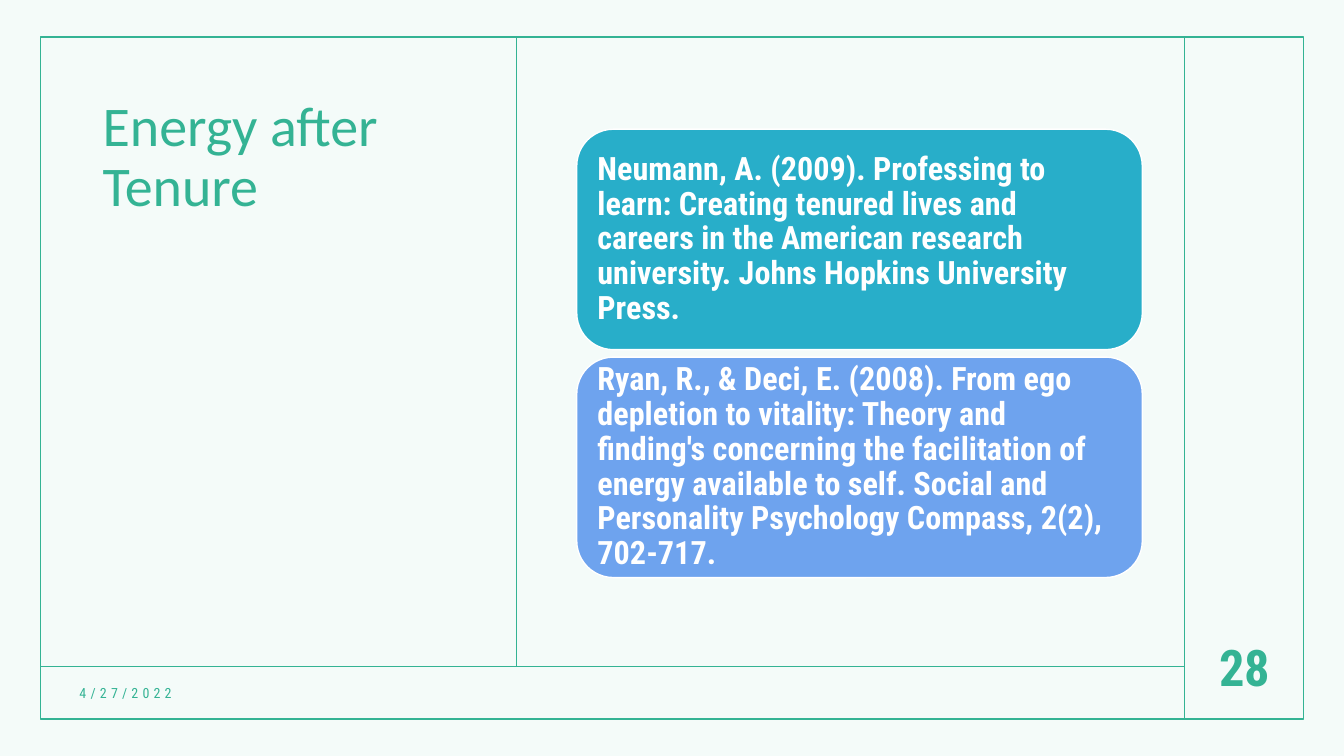
from dataclasses import dataclass

from lxml.etree import SubElement
from pptx import Presentation
from pptx.dml.color import RGBColor as Rgb
from pptx.enum.shapes import MSO_CONNECTOR as Link, MSO_SHAPE as Form
from pptx.enum.text import MSO_ANCHOR as Anchor, PP_ALIGN as Align
from pptx.oxml.ns import qn
from pptx.shapes.autoshape import Shape
from pptx.slide import Slide
from pptx.util import Pt


@dataclass(frozen=True)
class Theme:
    green: str = "34B394"
    teal: str = "28AEC9"
    blue: str = "6EA3EE"
    white: str = "FFFFFF"
    head: str = "Calibri"
    body: str = "Roboto Condensed"
    title: float = 40
    card: float = 23
    date: float = 10
    page: float = 36
    rule: float = 1


@dataclass(frozen=True)
class Box:
    left: float
    top: float
    width: float
    height: float


@dataclass(frozen=True)
class Label:
    text: str
    box: Box
    font: str
    size: float
    bold: bool = False
    align: Align = Align.LEFT
    anchor: Anchor = Anchor.MIDDLE
    lead: float = 1
    track: float = 0


@dataclass(frozen=True)
class Rule:
    x1: float
    y1: float
    x2: float
    y2: float


@dataclass(frozen=True)
class Card:
    text: str
    fill: str


THEME = Theme()
WIDE, HIGH = 960, 540
LEFT, TOP, RIGHT, BASE = 29, 26.5, 931, 513.5
SPLIT, SIDE, FOOT = 368.8, 846, 476

RULES = [
    Rule(SPLIT, TOP, SPLIT, FOOT),
    Rule(SIDE, TOP, SIDE, BASE),
    Rule(LEFT, FOOT, SIDE, FOOT),
]
LABELS = [
    Label("Energy after Tenure", Box(66.2, 66.2, 267, 361.5), THEME.head,
          THEME.title, anchor=Anchor.TOP, lead=0.9),
    Label("4/27/2022", Box(49.7, 483.8, 248.4, 22.3), THEME.body,
          THEME.date, track=3),
    Label("28", Box(851.8, 446.4, 74.9, 59.8), THEME.body, THEME.page,
          bold=True, align=Align.CENTER),
]
CARDS = [
    Card("Neumann, A. (2009). Professing to learn: Creating tenured lives "
         "and careers in the American research university. Johns Hopkins "
         "University Press.", THEME.teal),
    Card("Ryan, R., & Deci, E. (2008). From ego depletion to vitality: "
         "Theory and finding's concerning the facilitation of energy "
         "available to self. Social and Personality Psychology Compass, "
         "2(2), 702-717.", THEME.blue),
]
FIRST = Box(412, 92.3, 404, 157.5)
STEP = 162.8


def place(box: Box) -> tuple[Pt, Pt, Pt, Pt]:
    return Pt(box.left), Pt(box.top), Pt(box.width), Pt(box.height)


def panel(slide: Slide, form: Form, box: Box, fill: str = "",
          line: str = "") -> Shape:
    shape = slide.shapes.add_shape(form, *place(box))
    shape.shadow.inherit = False
    if fill:
        shape.fill.solid()
        shape.fill.fore_color.rgb = Rgb.from_string(fill)
    else:
        shape.fill.background()
    if line:
        shape.line.color.rgb = Rgb.from_string(line)
        shape.line.width = Pt(THEME.rule)
    else:
        shape.line.fill.background()
    return shape


def write(shape: Shape, label: Label, color: str) -> None:
    frame = shape.text_frame
    frame.word_wrap = True
    frame.vertical_anchor = label.anchor
    para = frame.paragraphs[0]
    run = para.add_run()
    run.text = label.text
    if label.track:
        run._r.get_or_add_rPr().set("spc", str(round(label.track * 100)))
    para.alignment = label.align
    para.line_spacing = label.lead
    font = para.font
    font.name = label.font
    font.size = Pt(label.size)
    font.bold = label.bold
    font.color.rgb = Rgb.from_string(color)


def draw_rule(slide: Slide, rule: Rule) -> None:
    line = slide.shapes.add_connector(
        Link.STRAIGHT, Pt(rule.x1), Pt(rule.y1), Pt(rule.x2), Pt(rule.y2))
    line.line.color.rgb = Rgb.from_string(THEME.green)
    line.line.width = Pt(THEME.rule)
    SubElement(line._element.spPr, qn("a:effectLst"))


def draw_card(slide: Slide, card: Card, top: float) -> None:
    box = Box(FIRST.left, top, FIRST.width, FIRST.height)
    shape = panel(slide, Form.ROUNDED_RECTANGLE, box, card.fill, THEME.white)
    frame = shape.text_frame
    frame.margin_left = frame.margin_right = Pt(7.2)
    frame.margin_top = frame.margin_bottom = Pt(7.2)
    label = Label(card.text, box, THEME.body, THEME.card, bold=True, lead=0.9)
    write(shape, label, THEME.white)


def draw_base(slide: Slide) -> None:
    back = slide.background.fill
    back.solid()
    back.fore_color.rgb = Rgb.from_string(THEME.white)
    tint = panel(slide, Form.RECTANGLE, Box(0, 0, WIDE, HIGH), THEME.green)
    color = tint._element.spPr.find(qn("a:solidFill"))[0]
    SubElement(color, qn("a:alpha")).set("val", "5000")
    frame = Box(LEFT, TOP, RIGHT - LEFT, BASE - TOP)
    panel(slide, Form.RECTANGLE, frame, line=THEME.green)


def main() -> None:
    deck = Presentation()
    deck.slide_width, deck.slide_height = Pt(WIDE), Pt(HIGH)
    slide = deck.slides.add_slide(deck.slide_layouts[6])
    draw_base(slide)
    for rule in RULES:
        draw_rule(slide, rule)
    for label in LABELS:
        write(slide.shapes.add_textbox(*place(label.box)), label, THEME.green)
    for rank, card in enumerate(CARDS):
        draw_card(slide, card, FIRST.top + rank * STEP)
    deck.save("out.pptx")


if __name__ == "__main__":
    main()
